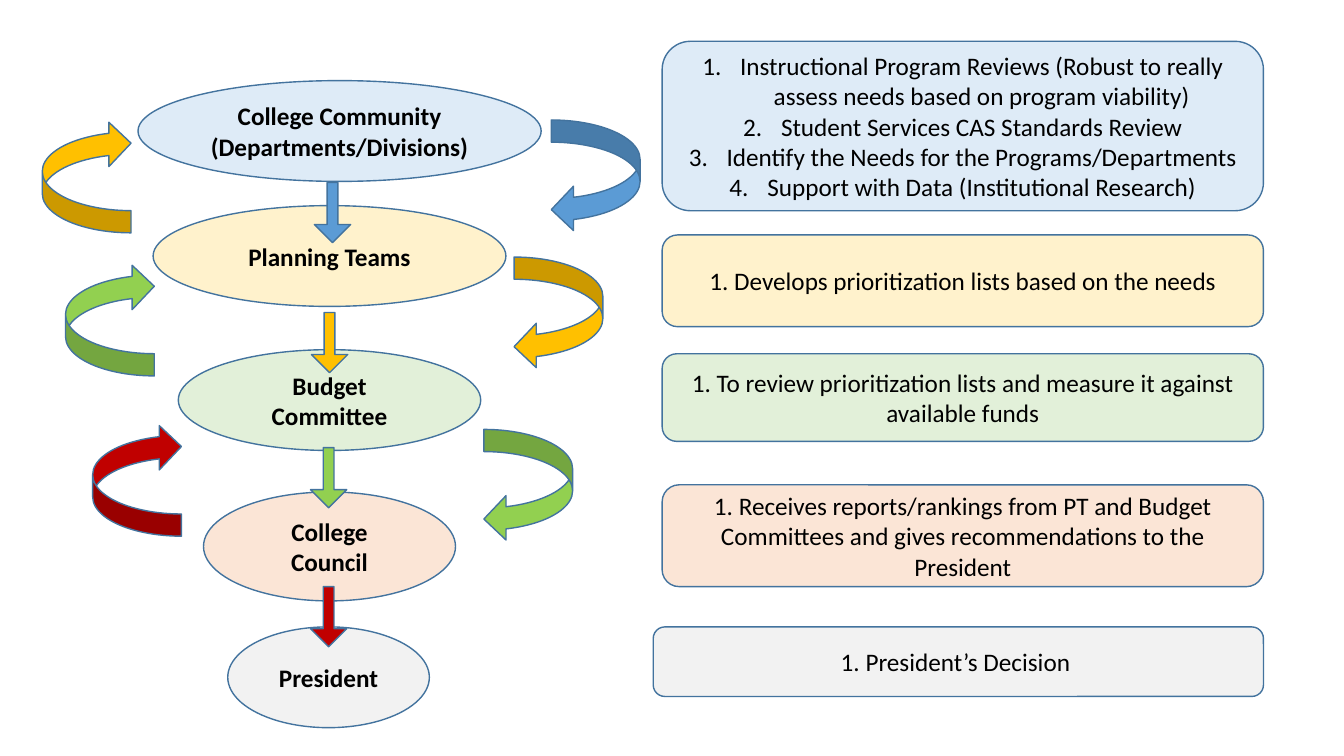
from lxml import etree
from pptx import Presentation
from pptx.dml.color import RGBColor
from pptx.enum.shapes import MSO_SHAPE
from pptx.enum.text import MSO_ANCHOR, PP_ALIGN
from pptx.oxml.ns import qn
from pptx.util import Pt

OVAL, BOX = MSO_SHAPE.OVAL, MSO_SHAPE.ROUNDED_RECTANGLE
DOWN, LOOP = MSO_SHAPE.DOWN_ARROW, MSO_SHAPE.CURVED_LEFT_ARROW
MIDDLE, CENTER = MSO_ANCHOR.MIDDLE, PP_ALIGN.CENTER

THEME = {
    "font": "Calibri", "size": 18, "text": "000000", "outline": "43739E",
    "pale blue": "DEEBF7", "pale yellow": "FFF2CC", "pale green": "E2F0D9",
    "pale orange": "FBE5D6", "pale gray": "F2F2F2",
    "blue": "5B9BD5", "yellow": "FFC000", "green": "92D050", "red": "C00000",
}

prs = Presentation()
prs.slide_width, prs.slide_height = Pt(960), Pt(540)
slide = prs.slides.add_slide(prs.slide_layouts[6])


def add_outlined(kind, left, top, width, height, color):
    shape = slide.shapes.add_shape(kind, Pt(left), Pt(top), Pt(width), Pt(height))
    shape.shadow.inherit = False
    shape.fill.solid()
    shape.fill.fore_color.rgb = RGBColor.from_string(THEME[color])
    shape.line.color.rgb = RGBColor.from_string(THEME["outline"])
    shape.line.width = Pt(1)
    return shape


def write(shape, lines, bold=False):
    frame = shape.text_frame
    frame.word_wrap = True
    frame.vertical_anchor = MIDDLE
    frame.text = "\n".join(lines)
    font_format = {"name": THEME["font"], "size": Pt(THEME["size"]), "bold": bold}
    for paragraph in frame.paragraphs:
        paragraph.alignment = CENTER
        font = paragraph.runs[0].font
        for name, value in font_format.items():
            setattr(font, name, value)
        font.color.rgb = RGBColor.from_string(THEME["text"])


# Decision bodies: text, centre x, top, width, height, colour
bodies = [
    ("College Community (Departments/Divisions)", 242.6, 57.6, 288, 72, "pale blue"),
    ("Planning Teams", 235.4, 146.9, 252, 72, "pale yellow"),
    ("Budget Committee", 235.4, 249.8, 216, 72, "pale green"),
    ("College Council", 235.4, 351.4, 180, 77.8, "pale orange"),
    ("President", 234.7, 447.8, 144, 72, "pale gray"),
]
for body, center, top, width, height, color in bodies:
    oval = add_outlined(OVAL, center - width / 2, top, width, height, color)
    write(oval, [body], bold=True)

# Tasks of each body: lines, left, top, height, colour
TASK_RIGHT = 902.5
tasks = [
    (["Instructional Program Reviews (Robust to really assess needs based on program viability)",
      "Student Services CAS Standards Review",
      "Identify the Needs for the Programs/Departments",
      "Support with Data (Institutional Research)"], 473, 29.5, 121, "pale blue"),
    (["1. Develops prioritization lists based on the needs"],
     473, 167.8, 65.5, "pale yellow"),
    (["1. To review prioritization lists and measure it against available funds"],
     473, 252.7, 62.6, "pale green"),
    (["1. Receives reports/rankings from PT and Budget Committees and gives "
      "recommendations to the President"], 473, 346.3, 72.7, "pale orange"),
    (["1. President’s Decision "], 466.6, 447.8, 49.7, "pale gray"),
]
for lines, left, top, height, color in tasks:
    task = add_outlined(BOX, left, top, TASK_RIGHT - left, height, color)
    write(task, lines)
    if len(lines) > 1:
        # Automatic numbers with a hanging indent
        for paragraph in task.text_frame.paragraphs:
            properties = paragraph._p.get_or_add_pPr()
            properties.set("marL", str(Pt(27)))
            properties.set("indent", str(-Pt(27)))
            etree.SubElement(properties, qn("a:buAutoNum"), type="arabicPeriod")

# Arrows down to the next body
steps = [(224.6, 130.3, "blue"), (222.5, 223.2, "yellow"),
         (221.8, 319.7, "green"), (221.8, 419, "red")]
for left, top, color in steps:
    step = add_outlined(DOWN, left, top, 25.9, 43, color)
    step.adjustments[0] = 0.296
    step.adjustments[1] = 0.5

# Feedback loops: down on the right, back up on the left
loops = [
    (393.8, 85.7, 0, "blue"), (367.2, 183.6, 0, "yellow"), (345.6, 306.7, 0, "green"),
    (30.2, 86.4, 180, "yellow"), (46.8, 188.6, 180, "green"), (66.2, 303.1, 180, "red"),
]
for left, top, rotation, color in loops:
    loop = add_outlined(LOOP, left, top, 63.4, 79.9, color)
    loop.rotation = rotation

prs.save("out.pptx")
